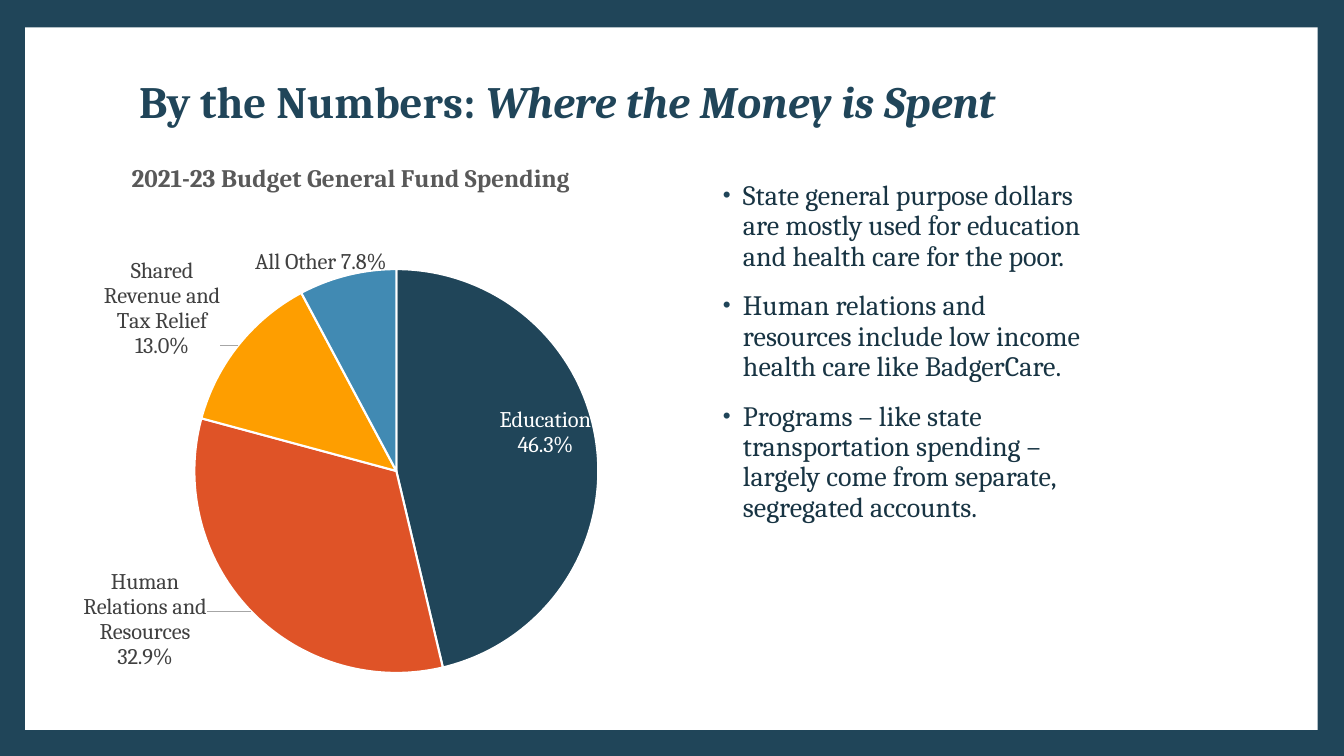
"""Build the slide on general fund spending: a pie chart beside three bullets."""
from dataclasses import dataclass
from typing import Any

from lxml import etree
from pptx import Presentation
from pptx.chart.data import CategoryChartData
from pptx.dml.color import RGBColor
from pptx.enum.chart import XL_CHART_TYPE, XL_LABEL_POSITION
from pptx.enum.shapes import MSO_SHAPE
from pptx.enum.text import MSO_ANCHOR, MSO_AUTO_SIZE, PP_ALIGN
from pptx.oxml.ns import qn
from pptx.util import Inches, Pt

PIE = XL_CHART_TYPE.PIE
INSIDE, OUTSIDE = XL_LABEL_POSITION.INSIDE_END, XL_LABEL_POSITION.OUTSIDE_END
RECT = MSO_SHAPE.RECTANGLE
MIDDLE, TOP = MSO_ANCHOR.MIDDLE, MSO_ANCHOR.TOP
LEFT = PP_ALIGN.LEFT
NO_FIT = MSO_AUTO_SIZE.NONE
WIDTH, HEIGHT = Inches(13.33), Inches(7.5)
COLUMNS, ROWS = 32, 18


@dataclass(frozen=True)
class Theme:
    """Colours, type sizes and typeface of the slide."""
    navy: str = "204559"
    ink: str = "183443"
    orange: str = "DF5327"
    amber: str = "FE9E00"
    blue: str = "418AB3"
    white: str = "FFFFFF"
    label: str = "404040"
    heading: str = "595959"
    leader: str = "A6A6A6"
    font: str = "Cambria"
    title_size: int = 32
    body_size: int = 20
    heading_size: int = 18
    label_size: int = 16


@dataclass(frozen=True)
class Box:
    """A rectangle in grid columns and rows."""
    col: float
    row: float
    cols: float
    rows: float

    def emu(self) -> tuple[int, int, int, int]:
        """Return left, top, width and height in EMU."""
        cw, rh = WIDTH / COLUMNS, HEIGHT / ROWS
        return (int(self.col * cw), int(self.row * rh),
                int(self.cols * cw), int(self.rows * rh))


@dataclass(frozen=True)
class Slice:
    """A pie slice with its label colour, shift, position and separator."""
    name: str
    value: float
    fill: str
    ink: str
    dx: float
    dy: float
    position: Any = OUTSIDE
    separator: str = " "


T = Theme()
PANEL = Box(0.6, 0.65, 30.77, 16.73)
TITLE = Box(3.07, 0.74, 25.7, 3.46)
CHART = Box(0.46, 3.31, 16.03, 13.75)
BODY = Box(16.85, 4.2, 9.31, 12.96)
SLICES = (
    Slice("Education", 0.463, T.navy, T.white, 0, -0.07, INSIDE, "\n"),
    Slice("Human Relations and Resources", 0.329, T.orange, T.label, -0.06, -0.08),
    Slice("Shared Revenue and Tax Relief", 0.13, T.amber, T.label, -0.02, 0.03),
    Slice("All Other", 0.078, T.blue, T.label, 0.06, 0.01),
)
BULLETS = (
    "State general purpose dollars are mostly used for education and health care for the poor.",
    "Human relations and resources include low income health care like BadgerCare.",
    "Programs – like state transportation spending – largely come from separate, "
    "segregated accounts.",
)


def set_font(font, *, size: float, color: str, bold=False, italic=False) -> None:
    """Format a font object."""
    font.name, font.size = T.font, Pt(size)
    font.bold, font.italic = bold, italic
    font.color.rgb = RGBColor.from_string(color)


def add_text(p, text: str, **fmt) -> None:
    """Add a formatted run to a paragraph."""
    r = p.add_run()
    r.text = text
    set_font(r.font, **fmt)


def paint(fill, color: str) -> None:
    """Give a fill one solid colour."""
    fill.solid()
    fill.fore_color.rgb = RGBColor.from_string(color)


def place(sp, box: Box, anchor):
    """Move a placeholder and return its text frame."""
    sp.left, sp.top, sp.width, sp.height = box.emu()
    tf = sp.text_frame
    tf.word_wrap, tf.auto_size, tf.vertical_anchor = True, NO_FIT, anchor
    return tf


def add_bullet(p) -> None:
    """Give a paragraph a hanging round bullet."""
    pPr = p._p.get_or_add_pPr()
    pPr.set("marL", str(Inches(0.25)))
    pPr.set("indent", str(Inches(-0.2)))
    color = etree.SubElement(pPr, qn("a:buClr"))
    etree.SubElement(color, qn("a:srgbClr"), val=T.navy)
    etree.SubElement(pPr, qn("a:buSzPct"), val="80000")
    etree.SubElement(pPr, qn("a:buFont"), typeface="Arial")
    etree.SubElement(pPr, qn("a:buChar"), char="•")


def set_layout(parent, index: int, **settings) -> None:
    """Put a manual layout into a chart element."""
    for old in parent.findall(qn("c:layout")):
        parent.remove(old)
    layout = etree.Element(qn("c:layout"))
    manual = etree.SubElement(layout, qn("c:manualLayout"))
    for name, value in settings.items():
        etree.SubElement(manual, qn(f"c:{name}"), val=str(value))
    parent.insert(index, layout)


def style_slice(point, item: Slice) -> None:
    """Colour a slice and set its label."""
    paint(point.format.fill, item.fill)
    paint(point.format.line.fill, T.white)
    point.format.line.width = Pt(1.5)
    label = point.data_label
    set_font(label.font, size=T.label_size, color=item.ink)
    label.position = item.position
    dLbl = label.font._element.getparent().getparent().getparent().getparent()
    set_layout(dLbl, 1, x=item.dx, y=item.dy)
    dLbl.insert(2, etree.Element(qn("c:numFmt"), formatCode="0.0%", sourceLinked="0"))
    dLbl.find(qn("c:showCatName")).set("val", "1")
    etree.SubElement(dLbl, qn("c:separator")).text = item.separator


def style_leaders(series) -> None:
    """Draw the label leader lines thin and grey."""
    dLbls = series._element.find(qn("c:dLbls"))
    leaders = etree.Element(qn("c:leaderLines"))
    dLbls.find(qn("c:showLeaderLines")).addnext(leaders)
    spPr = etree.SubElement(leaders, qn("c:spPr"))
    line = etree.SubElement(spPr, qn("a:ln"), w=str(Pt(0.75)))
    fill = etree.SubElement(line, qn("a:solidFill"))
    etree.SubElement(fill, qn("a:srgbClr"), val=T.leader)


def add_pie(s) -> None:
    """Draw the spending pie with its heading."""
    data = CategoryChartData(number_format="0.0%")
    data.categories = [item.name for item in SLICES]
    data.add_series("Series 1", [item.value for item in SLICES])
    chart = s.shapes.add_chart(PIE, *CHART.emu(), data).chart
    set_font(chart.font, size=T.label_size, color=T.label)
    chart.has_legend, chart.has_title = False, True
    title = chart.chart_title
    add_text(title.text_frame.paragraphs[0], "2021-23 Budget General Fund Spending",
             size=T.heading_size, color=T.heading, bold=True)
    title.include_in_layout = False
    set_layout(title._element, 1, xMode="edge", yMode="edge", x=0.16, y=0.03)
    plot = chart.plots[0]
    plot.vary_by_categories = True
    set_layout(plot._element.getparent(), 0, layoutTarget="inner", xMode="edge",
               yMode="edge", x=0.26, y=0.21, w=0.6, h=0.73)
    for i, item in enumerate(SLICES):
        style_slice(plot.series[0].points[i], item)
    style_leaders(plot.series[0])


def main() -> None:
    """Assemble and save the slide."""
    prs = Presentation()
    prs.slide_width, prs.slide_height = WIDTH, HEIGHT
    s = prs.slides.add_slide(prs.slide_layouts[1])
    paint(s.background.fill, T.navy)
    panel = s.shapes.add_shape(RECT, *PANEL.emu())
    panel.shadow.inherit = False
    paint(panel.fill, T.white)
    panel.line.fill.background()
    s.shapes.title.element.addprevious(panel.element)
    p = place(s.shapes.title, TITLE, MIDDLE).paragraphs[0]
    p.alignment, p.line_spacing = LEFT, 0.9
    for text, italic in (("By the Numbers: ", False), ("Where the Money is Spent", True)):
        add_text(p, text, size=T.title_size, color=T.navy, bold=True, italic=italic)
    add_pie(s)
    tf = place(s.placeholders[1], BODY, TOP)
    for i, text in enumerate(BULLETS):
        p = tf.add_paragraph() if i else tf.paragraphs[0]
        add_bullet(p)
        p.line_spacing, p.space_before = 0.9, Pt(14 if i else 0)
        add_text(p, text, size=T.body_size, color=T.ink)
    prs.save("out.pptx")


if __name__ == "__main__":
    main()
